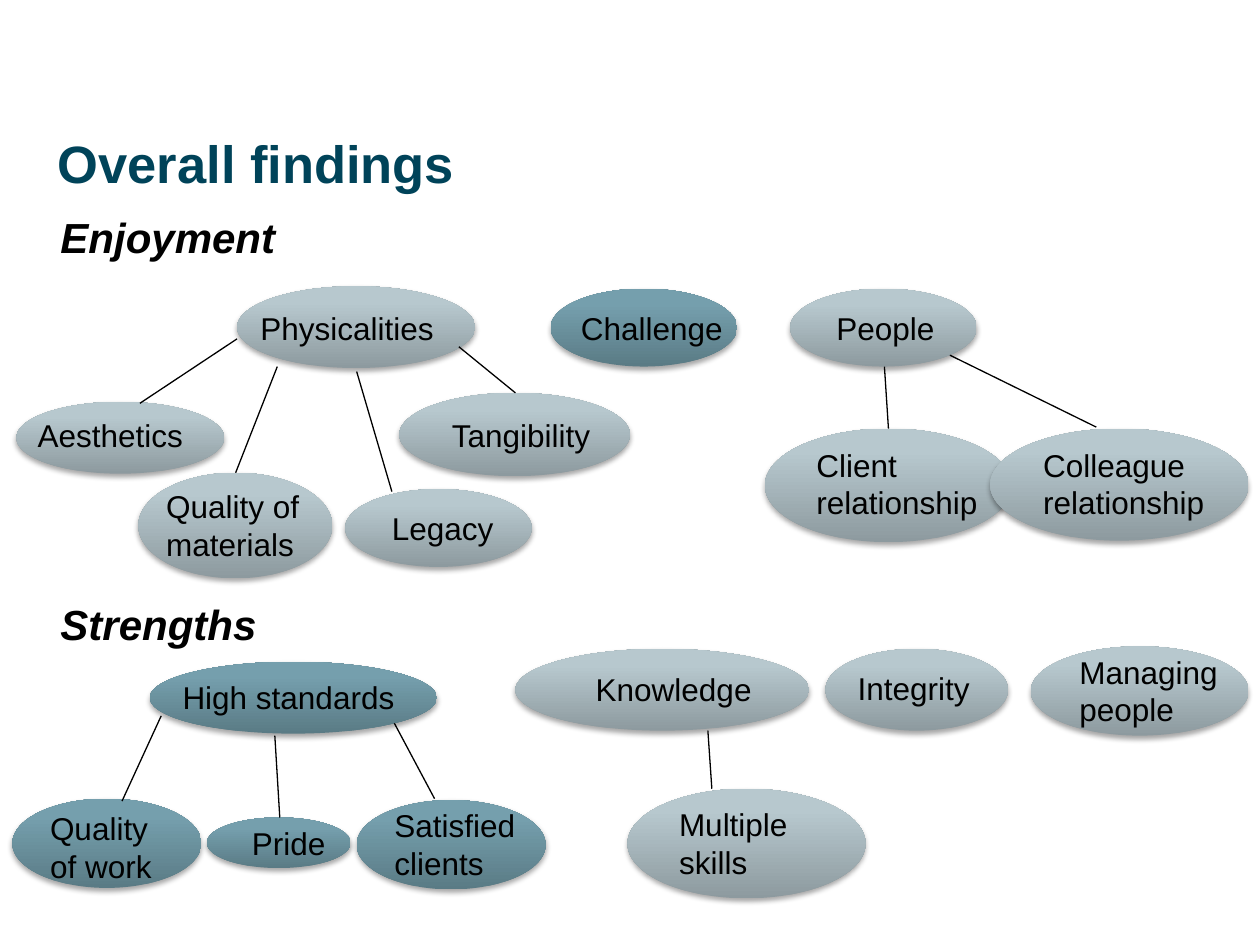
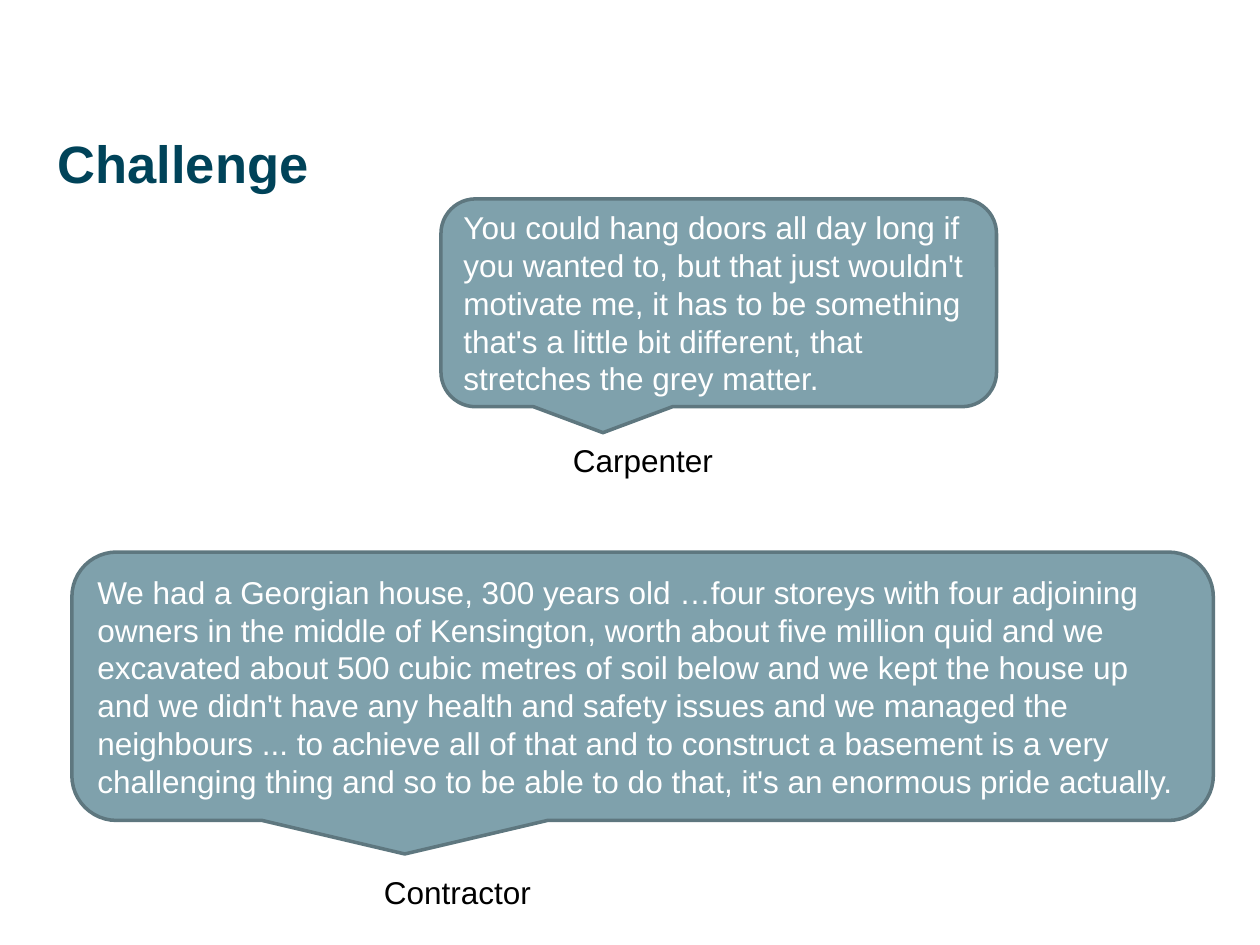
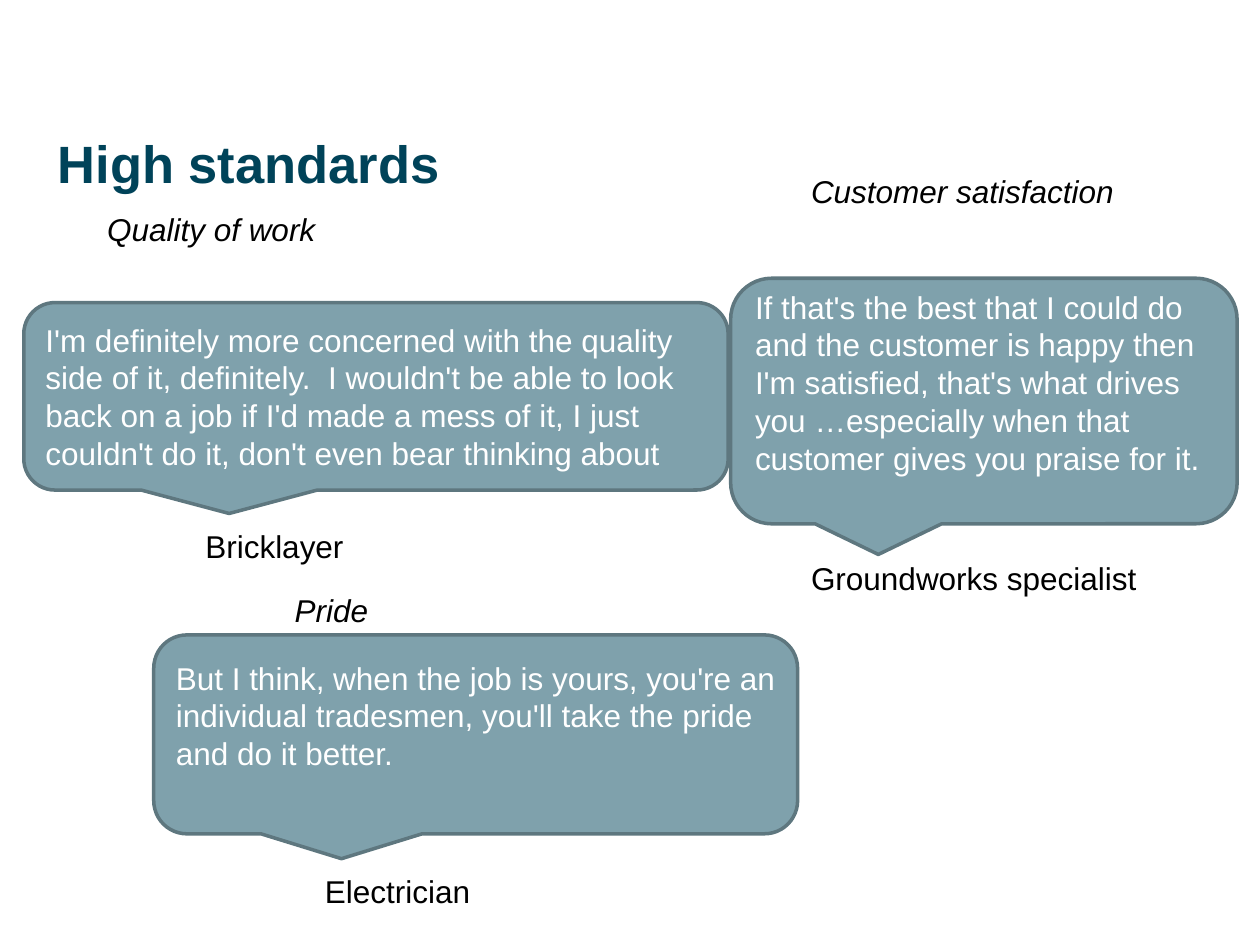
from copy import deepcopy

from pptx import Presentation
from pptx.dml.color import RGBColor
from pptx.enum.shapes import MSO_CONNECTOR, MSO_SHAPE
from pptx.enum.text import MSO_ANCHOR, MSO_AUTO_SIZE, PP_ALIGN
from pptx.oxml import parse_xml
from pptx.oxml.ns import nsdecls, qn
from pptx.util import Cm, Pt

# Style
FONT = "Arial"
NAVY = RGBColor(0x00, 0x43, 0x59)
BLACK = RGBColor(0x00, 0x00, 0x00)
WHITE = RGBColor(0xFF, 0xFF, 0xFF)
TEAL = RGBColor(0x7F, 0xA1, 0xAC)
SLATE = RGBColor(0x5E, 0x77, 0x7F)
GREY_FADE = (RGBColor(0x8D, 0x9A, 0x9F), RGBColor(0xB7, 0xC8, 0xCE),
             RGBColor(0xB8, 0xC9, 0xCF))
TEAL_FADE = (RGBColor(0x5A, 0x7B, 0x85), RGBColor(0x75, 0x9F, 0xAD),
             RGBColor(0x74, 0xA1, 0xAF))
STOPS = (0, 0.8, 1)
OVAL = MSO_SHAPE.OVAL
CALLOUT = MSO_SHAPE.ROUNDED_RECTANGULAR_CALLOUT
LINE = MSO_CONNECTOR.STRAIGHT
LEFT = PP_ALIGN.LEFT
TOP, MIDDLE = MSO_ANCHOR.TOP, MSO_ANCHOR.MIDDLE
GROW = MSO_AUTO_SIZE.SHAPE_TO_FIT_TEXT
TITLE_ONLY = 5
INSET = 0.13
ROW = 0.76  # height of one line of body text

SHADOW = (
    f'<a:outerShdw {nsdecls("a")} blurRad="39370" dist="22860" dir="5400000"'
    ' rotWithShape="0"><a:srgbClr val="000000"><a:alpha val="35000"/>'
    '</a:srgbClr></a:outerShdw>')


class Deck:
    def __init__(self):
        self.prs = Presentation()
        self.prs.slide_width, self.prs.slide_height = Cm(25.4), Cm(19.05)
        self.slide = None

    def put(self, frame, text, color, size=18, bold=False, italic=False):
        frame.word_wrap = True
        frame.text = text
        para = frame.paragraphs[0]
        para.alignment = LEFT
        font = para.font
        font.name, font.size, font.color.rgb = FONT, Pt(size), color
        font.bold, font.italic = bold, italic

    def page(self, title):
        layout = self.prs.slide_layouts[TITLE_ONLY]
        self.slide = self.prs.slides.add_slide(layout)
        head = self.slide.shapes.title
        head.left, head.top = Cm(0.91), Cm(2.51)
        head.width, head.height = Cm(23.57), Cm(3.61)
        self.put(head.text_frame, title, NAVY, 30, bold=True)
        head.text_frame.vertical_anchor = TOP

    def label(self, text, x, y, width, rows=1, size=18, **style):
        height = 2 * INSET + rows * ROW * size / 18
        box = self.slide.shapes.add_textbox(
            Cm(x), Cm(y), Cm(width), Cm(height))
        self.put(box.text_frame, text, BLACK, size, **style)
        box.text_frame.auto_size = GROW

    def shape(self, kind, box):
        shape = self.slide.shapes.add_shape(kind, *map(Cm, box))
        shape.shadow.inherit = False
        return shape

    def oval(self, box, fade):
        oval = self.shape(OVAL, box)
        oval.line.fill.background()
        oval.fill.gradient()
        oval.fill.gradient_angle = 90
        props = oval._element.spPr
        stops = props.find(".//" + qn("a:gsLst"))
        stops.append(deepcopy(stops[-1]))
        for stop, place, color in zip(oval.fill.gradient_stops, STOPS, fade):
            stop.position, stop.color.rgb = place, color
        props.find(qn("a:effectLst")).append(parse_xml(SHADOW))

    def quote(self, text, box, lift=0):
        """A speech bubble; lift keeps free lines below the text."""
        bubble = self.shape(CALLOUT, box)
        bubble.fill.solid()
        bubble.fill.fore_color.rgb = TEAL
        bubble.line.color.rgb, bubble.line.width = SLATE, Pt(2)
        frame = bubble.text_frame
        self.put(frame, text, WHITE)
        frame.vertical_anchor = MIDDLE
        frame.margin_bottom = Cm(INSET + lift * ROW)

    def link(self, *ends):
        line = self.slide.shapes.add_connector(LINE, *map(Cm, ends))
        line.line.color.rgb, line.line.width = BLACK, Pt(0.75)
        line._element.spPr.append(
            parse_xml(f'<a:effectLst {nsdecls("a")}/>'))


# Themes: text, oval box, label place (left, top, width, rows), fade
THEMES = [
    ("Physicalities", (4.78, 5.77, 4.8, 1.65), (5, 6.1, 6.6), GREY_FADE),
    ("Challenge", (11.1, 5.82, 3.76, 1.57), (11.46, 6.1, 3.51), TEAL_FADE),
    ("People", (15.93, 5.82, 3.76, 1.57), (16.61, 6.1, 3.76), GREY_FADE),
    ("Aesthetics", (0.33, 8.1, 4.19, 1.45), (0.51, 8.26, 3.78), GREY_FADE),
    ("Quality of materials", (2.79, 9.53, 3.91, 2.13),
     (3.1, 9.7, 4.6, 2), GREY_FADE),
    ("Legacy", (6.96, 9.86, 3.76, 1.57), (7.65, 10.13, 3.76), GREY_FADE),
    ("Tangibility", (8.05, 7.92, 4.65, 1.68), (8.86, 8.26, 5.38), GREY_FADE),
    ("Client relationship", (15.42, 8.64, 4.98, 2.29),
     (16.21, 8.86, 3.99, 2), GREY_FADE),
    ("Colleague relationship", (19.96, 8.64, 5.21, 2.26),
     (20.78, 8.86, 4.39, 2), GREY_FADE),
    ("High standards", (3.02, 13.34, 5.79, 1.45),
     (3.43, 13.54, 6.4), TEAL_FADE),
    ("Knowledge", (10.39, 13.08, 5.92, 1.65),
     (11.76, 13.39, 3.89), GREY_FADE),
    ("Integrity", (16.64, 13.08, 3.68, 1.65),
     (17.04, 13.36, 3.15), GREY_FADE),
    ("Managing people", (20.78, 13.03, 4.39, 1.8),
     (21.51, 13.03, 3.56, 2), GREY_FADE),
    ("Quality of work", (0.25, 16.1, 3.81, 1.8),
     (0.76, 16.18, 3.1, 2), TEAL_FADE),
    ("Pride", (4.17, 16.48, 2.9, 1.02), (4.83, 16.48, 2.18), TEAL_FADE),
    ("Satisfied clients", (7.19, 16.13, 3.81, 1.8),
     (7.7, 16.13, 3.71, 2), TEAL_FADE),
    ("Multiple skills", (12.65, 15.9, 4.8, 2.21),
     (13.44, 16.1, 4.01, 2), GREY_FADE),
]

# Links from a theme to its parts: start and end points
LINKS = [
    (4.78, 6.83, 2.82, 8.13), (5.59, 7.39, 4.75, 9.53),
    (7.19, 7.49, 7.9, 9.91), (9.25, 6.99, 10.39, 7.92),
    (17.83, 7.39, 17.91, 8.64), (19.15, 7.16, 22.1, 8.61),
    (3.25, 14.43, 2.46, 16.15), (5.54, 14.83, 5.64, 16.48),
    (7.95, 14.58, 8.76, 16.1), (14.27, 14.73, 14.35, 15.9),
]


def main():
    deck = Deck()

    # Findings map
    deck.page("Overall findings")
    for text, box, place, fade in THEMES:
        deck.oval(box, fade)
        deck.label(text, *place)
    for ends in LINKS:
        deck.link(*ends)
    for text, y in (("Enjoyment", 4.14), ("Strengths", 11.94)):
        deck.label(text, 0.97, y, 6, size=24, bold=True, italic=True)

    # Challenge quotes
    deck.page("Challenge")
    deck.quote(
        "You could hang doors all day long if you wanted to, but that just "
        "wouldn't motivate me, it has to be something that's a little bit "
        "different, that stretches the grey matter.",
        (8.89, 4.01, 11.2, 4.19))
    deck.label("Carpenter", 11.3, 8.76, 5.21)
    deck.quote(
        "We had a Georgian house, 300 years old …four storeys with four "
        "adjoining owners in the middle of Kensington, worth about five "
        "million quid and we excavated about 500 cubic metres of soil below "
        "and we kept the house up and we didn't have any health and safety "
        "issues and we managed the neighbours ... to achieve all of that and "
        "to construct a basement is a very challenging thing and so to be "
        "able to do that, it's an enormous pride actually.",
        (1.45, 11.13, 23.01, 5.41))
    deck.label("Contractor", 7.49, 17.48, 5.99)

    # Quotes on standards
    deck.page("High standards")
    deck.quote(
        "But I think, when the job is yours, you're an individual tradesmen, "
        "you'll take the pride and do it better.",
        (3.1, 12.8, 12.98, 4.01), lift=1)
    deck.label("Electrician", 6.3, 17.45, 4.6)
    deck.quote(
        "If that's the best that I could do and the customer is happy then "
        "I'm satisfied, that's what drives you …especially when that "
        "customer gives you praise for it.",
        (14.73, 5.61, 10.21, 4.95), lift=1)
    deck.label("Groundworks specialist", 16.1, 11.15, 7.39)
    deck.quote(
        "I'm definitely more concerned with the quality side of it, "
        "definitely.  I wouldn't be able to look back on a job if I'd made a "
        "mess of it, I just couldn't do it, don't even bear thinking about",
        (0.48, 6.1, 14.2, 3.78))
    deck.label("Bricklayer", 3.89, 10.49, 5.79)
    for text, x, y in (("Quality of work", 1.91, 4.11),
                       ("Customer satisfaction", 16.1, 3.35),
                       ("Pride", 5.69, 11.79)):
        deck.label(text, x, y, 7.5, italic=True)

    deck.prs.save("out.pptx")


if __name__ == "__main__":
    main()
